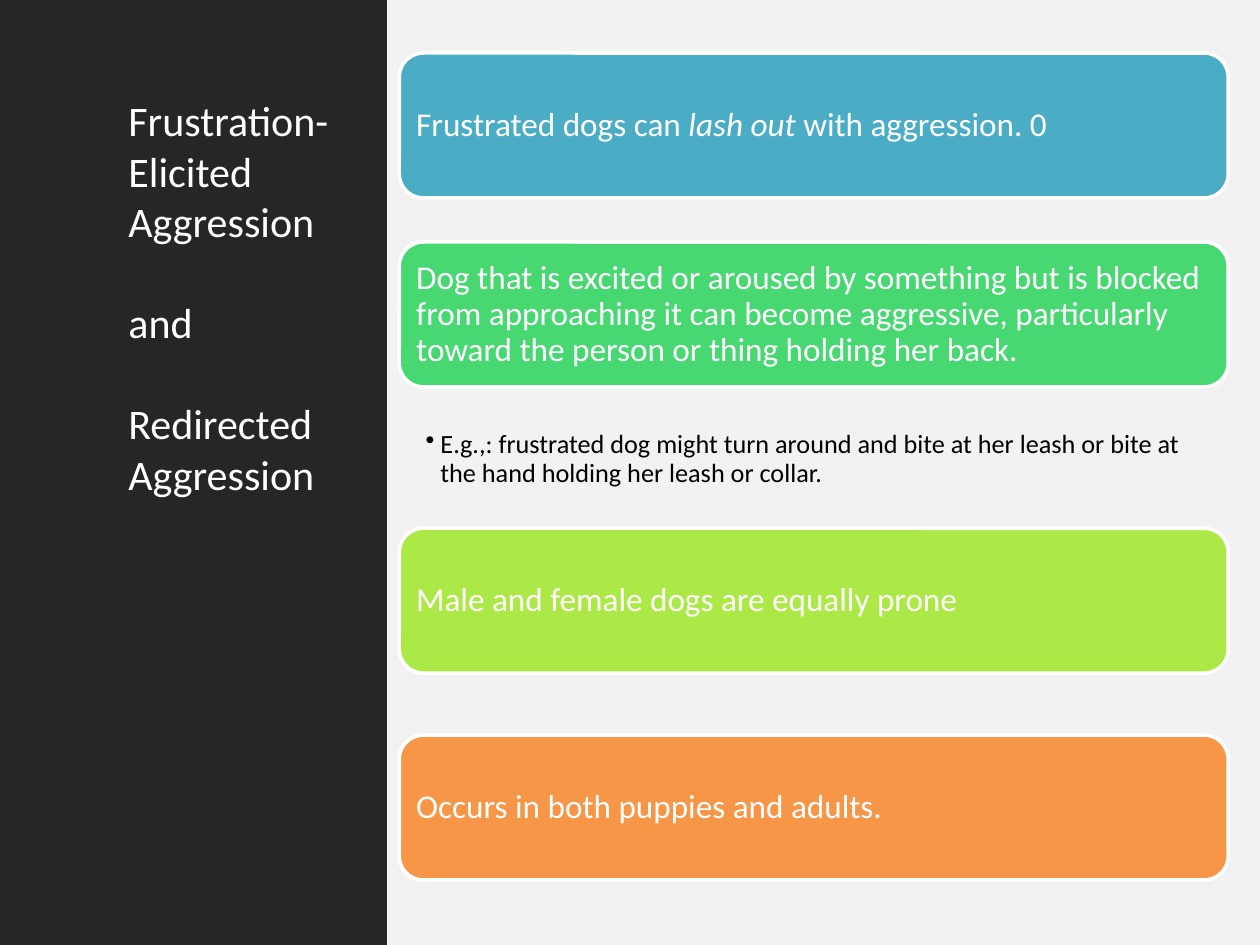
from lxml.etree import SubElement as Sub
from pptx import Presentation
from pptx.dml.color import RGBColor as Rgb
from pptx.enum.shapes import MSO_SHAPE as Kind
from pptx.enum.text import MSO_ANCHOR as Anchor, PP_ALIGN as Align
from pptx.oxml.ns import qn
from pptx.util import Cm, Pt

# Content: runs are (text, italic); cards are (top, fill, runs)
TITLE = ["Frustration-Elicited Aggression", "and", "Redirected Aggression"]
CARDS = [
    (1.07, "blue", [("Frustrated dogs can ", False), ("lash out ", True),
                    ("with aggression. 0", False)]),
    (4.88, "green", [("Dog that is excited or aroused by something but is blocked "
                      "from approaching it can become aggressive, particularly "
                      "toward the person or thing holding her back.", False)]),
    (10.65, "lime", [("Male and female dogs are equally prone", False)]),
    (14.82, "orange", [("Occurs in both puppies and adults.", False)]),
]
NOTE = ("E.g.,: frustrated dog might turn around and bite at her leash "
        "or bite at the hand holding her leash or collar.")

THEME = {
    "font": "Calibri",
    "size": {"title": 24, "card": 19, "note": 15},
    "color": {"white": "FFFFFF", "black": "000000", "dark": "262626",
              "pale": "F2F2F2", "blue": "4BACC6", "green": "47D872",
              "lime": "ACE946", "orange": "F79646"},
}

# Layout in centimetres
WIDE, HIGH = 25.4, 19.05
SPLIT = 7.8
LEFT, WIDTH, CARD_H = 8.05, 16.71, 2.92
PAD = 0.2


def tint(name):
    return Rgb.from_string(THEME["color"][name])


def apply(item, form):
    for key, val in form.items():
        setattr(item, key, val)


def block(slide, kind, box, fill):
    shape = slide.shapes.add_shape(kind, *map(Cm, box))
    shape.shadow.inherit = False
    shape.fill.solid()
    shape.fill.fore_color.rgb = tint(fill)
    shape.line.fill.background()
    return shape


def frame(shape, pads, anchor):
    text = shape.text_frame
    sides = ("margin_left", "margin_top", "margin_right", "margin_bottom")
    apply(text, {"word_wrap": True, "vertical_anchor": anchor,
                 **dict(zip(sides, map(Cm, pads)))})
    return text


def write(para, runs, role, color, **form):
    apply(para, {"alignment": Align.LEFT, **form})
    for words, slant in runs:
        run = para.add_run()
        run.text = words
        apply(run.font, {"name": THEME["font"], "italic": slant,
                         "size": Pt(THEME["size"][role])})
        run.font.color.rgb = tint(color)


def bullet(para, hang):
    props = para._p.get_or_add_pPr()
    props.set("marL", str(Cm(hang)))
    props.set("indent", str(-Cm(hang)))
    Sub(props, qn("a:buChar")).set("char", "•")


def main():
    deck = Presentation()
    apply(deck, {"slide_width": Cm(WIDE), "slide_height": Cm(HIGH)})
    slide = deck.slides.add_slide(deck.slide_layouts[6])

    # Two background panels
    block(slide, Kind.RECTANGLE, (SPLIT, 0, WIDE - SPLIT, HIGH), "pale")
    block(slide, Kind.RECTANGLE, (0, 0, SPLIT, HIGH), "dark")

    # Title, parts set one line apart
    box = slide.shapes.add_textbox(*map(Cm, (2.34, 1.78, 4.57, 15.49)))
    text = frame(box, (0.25, 0.13, 0.25, 0.13), Anchor.TOP)
    for num, words in enumerate(TITLE):
        para = text.add_paragraph() if num else text.paragraphs[0]
        gap = Pt(29) if num else Pt(0)
        write(para, [(words, False)], "title", "white", space_before=gap)

    # Cards
    for top, fill, runs in CARDS:
        card = block(slide, Kind.ROUNDED_RECTANGLE,
                     (LEFT, top, WIDTH, CARD_H), fill)
        card.line.color.rgb = tint("white")
        card.line.width = Pt(2)
        text = frame(card, [PAD] * 4, Anchor.MIDDLE)
        write(text.paragraphs[0], runs, "card", "white", line_spacing=0.9)

    # Note under the second card
    box = slide.shapes.add_textbox(*map(Cm, (LEFT, 8.61, WIDTH, 2.03)))
    para = frame(box, (0.53, 0.08, 0.38, 0.08), Anchor.TOP).paragraphs[0]
    bullet(para, 0.3)
    write(para, [(NOTE, False)], "note", "black", line_spacing=0.9, level=1)

    deck.save("out.pptx")


if __name__ == "__main__":
    main()
